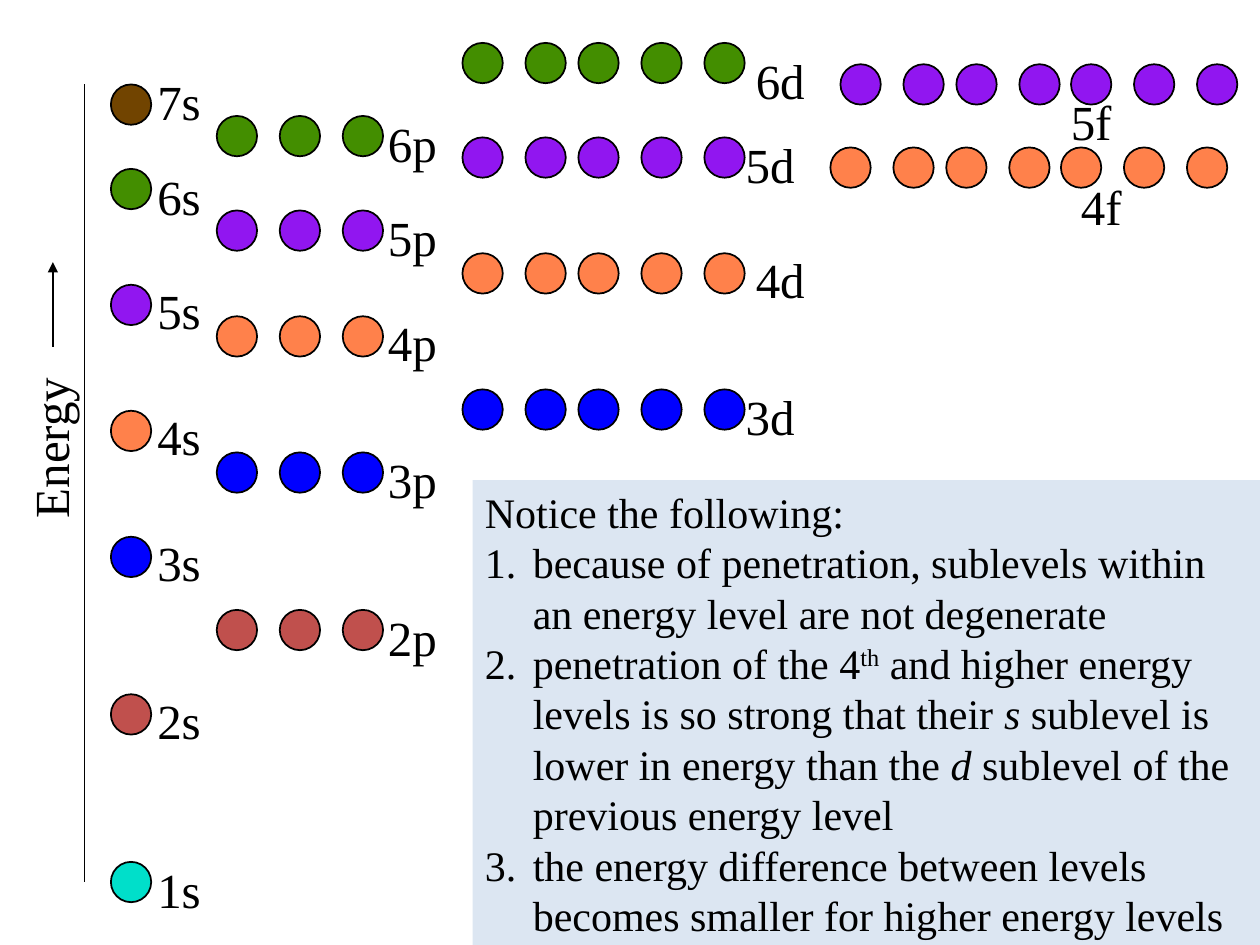
import pptx
import pptx.util
import pptx.dml.color
import pptx.enum.shapes
import pptx.enum.text
import pptx.oxml.ns
from lxml import etree

Inches, Pt = pptx.util.Inches, pptx.util.Pt
RGBColor = pptx.dml.color.RGBColor
MSO_SHAPE = pptx.enum.shapes.MSO_SHAPE
qn = pptx.oxml.ns.qn

FONT = "Times New Roman"
BLACK = RGBColor(0x00, 0x00, 0x00)
NOTE_FILL = RGBColor(0xDC, 0xE6, 0xF2)
TURQUOISE = RGBColor(0x00, 0xDF, 0xCA)
RED = RGBColor(0xC0, 0x50, 0x4D)
BLUE = RGBColor(0x00, 0x00, 0xFF)
ORANGE = RGBColor(0xFF, 0x81, 0x4B)
PURPLE = RGBColor(0x91, 0x16, 0xF0)
GREEN = RGBColor(0x43, 0x8E, 0x00)
BROWN = RGBColor(0x71, 0x44, 0x00)

# Level number, colour, and per sublevel: orbital left, orbital top, label left, label top
LEVELS = [
    (1, TURQUOISE, {"s": (0.88, 6.84, 1.15, 6.77)}),
    (7, BROWN, {"s": (0.88, 0.67, 1.15, 0.52)}),
    (2, RED, {"s": (0.88, 5.51, 1.15, 5.43), "p": (1.72, 4.84, 2.98, 4.77)}),
    (3, BLUE, {"s": (0.88, 4.26, 1.15, 4.18), "p": (1.72, 3.59, 2.98, 3.52),
               "d": (3.67, 3.09, 5.82, 3.02)}),
    (6, GREEN, {"s": (0.88, 1.34, 1.15, 1.27), "p": (1.72, 0.92, 2.98, 0.85),
                "d": (3.67, 0.34, 5.9, 0.35)}),
    (4, ORANGE, {"s": (0.88, 3.26, 1.15, 3.18), "p": (1.72, 2.51, 2.98, 2.43),
                 "d": (3.67, 2.01, 5.9, 1.93), "f": (6.59, 1.17, 8.48, 1.35)}),
    (5, PURPLE, {"s": (0.88, 2.26, 1.15, 2.18), "p": (1.72, 1.67, 2.98, 1.6),
                 "d": (3.67, 1.09, 5.82, 1.02), "f": (6.67, 0.51, 8.4, 0.68)}),
]
# Distance of each orbital from the first one of its sublevel
ORBITAL_STEPS = {
    "s": [0],
    "p": [0, 0.5, 1],
    "d": [0, 0.5, 0.92, 1.42, 1.92],
    "f": [0, 0.5, 0.92, 1.42, 1.83, 2.33, 2.83],
}
# Wide enough that grouped labels stay on one line
LABEL_WIDTHS = {"s": 0.57, "p": 0.6, "d": 0.6, "f": 0.54}
ORBITAL_SIZE = 0.32
LABEL_HEIGHT = 0.56

# Each run is (text, style)
NOTE_HEADING = [("Notice the following:", "")]
NOTE_POINTS = [
    [("because of penetration, sublevels within an energy level are not degenerate", "")],
    [("penetration of the 4", ""), ("th", "superscript"),
     (" and higher energy levels is so strong that their ", ""), ("s ", "italic"),
     ("sublevel is lower in energy than the ", ""), ("d", "italic"),
     (" sublevel of the previous energy level", "")],
    [("the energy difference between levels becomes smaller for higher energy levels", "")],
]


def set_font(paragraph, size):
    paragraph.font.name = FONT
    paragraph.font.size = Pt(size)
    paragraph.font.color.rgb = BLACK


def add_label(shapes, text, left, top, width):
    label = shapes.add_textbox(Inches(left), Inches(top), Inches(width), Inches(LABEL_HEIGHT))
    frame = label.text_frame
    frame.word_wrap = False
    frame.auto_size = pptx.enum.text.MSO_AUTO_SIZE.SHAPE_TO_FIT_TEXT
    frame.text = text
    set_font(frame.paragraphs[0], 28)
    return label


def add_orbital(shapes, left, top, colour):
    orbital = shapes.add_shape(MSO_SHAPE.OVAL, Inches(left), Inches(top),
                               Inches(ORBITAL_SIZE), Inches(ORBITAL_SIZE))
    orbital.shadow.inherit = False
    orbital.fill.solid()
    orbital.fill.fore_color.rgb = colour
    orbital.line.color.rgb = BLACK
    orbital.line.width = Pt(1)


def add_line(shapes, x, start, end):
    line = shapes.add_connector(pptx.enum.shapes.MSO_CONNECTOR.STRAIGHT,
                                Inches(x), Inches(start), Inches(x), Inches(end))
    line.line.color.rgb = BLACK
    line.line.width = Pt(1)
    etree.SubElement(line._element.spPr, qn("a:effectLst"))
    return line


def fill_paragraph(paragraph, runs, numbered):
    set_font(paragraph, 24)
    paragraph.alignment = pptx.enum.text.PP_ALIGN.LEFT
    properties = paragraph._p.get_or_add_pPr()
    properties.set("marL", str(Inches(0.38)))
    properties.set("indent", str(Inches(-0.38)))
    if numbered:
        number = etree.Element(qn("a:buAutoNum"), type="arabicPeriod")
        properties.insert(0, number)
    for text, style in runs:
        run = paragraph.add_run()
        run.text = text
        if style == "italic":
            run.font.italic = True
        elif style == "superscript":
            run.font._element.set("baseline", "30000")


presentation = pptx.Presentation()
presentation.slide_width = Inches(10)
presentation.slide_height = Inches(7.5)
slide = presentation.slides.add_slide(presentation.slide_layouts[6])

# Energy axis
add_line(slide.shapes, 0.67, 0.67, 7)
add_label(slide.shapes, "Energy", -0.27, 3.27, 1.32).rotation = 270
energy_arrow = add_line(slide.shapes, 0.42, 2.75, 2.08)
etree.SubElement(energy_arrow.line._get_or_add_ln(), qn("a:tailEnd"), type="triangle")

# Energy levels, one group each
for number, colour, sublevels in LEVELS:
    level = slide.shapes.add_group_shape()
    for sublevel, (left, top, label_left, label_top) in sublevels.items():
        for step in ORBITAL_STEPS[sublevel]:
            add_orbital(level.shapes, left + step, top, colour)
        add_label(level.shapes, f"{number}{sublevel}", label_left, label_top,
                  LABEL_WIDTHS[sublevel])

# Notes panel
notes = slide.shapes.add_shape(MSO_SHAPE.RECTANGLE, Inches(3.75), Inches(3.81),
                               Inches(6.25), Inches(3.69))
notes.shadow.inherit = False
notes.fill.solid()
notes.fill.fore_color.rgb = NOTE_FILL
notes.line.fill.background()
notes_frame = notes.text_frame
notes_frame.word_wrap = True
notes_frame.auto_size = pptx.enum.text.MSO_AUTO_SIZE.SHAPE_TO_FIT_TEXT
notes_frame.vertical_anchor = pptx.enum.text.MSO_ANCHOR.TOP
fill_paragraph(notes_frame.paragraphs[0], NOTE_HEADING, numbered=False)
for point in NOTE_POINTS:
    fill_paragraph(notes_frame.add_paragraph(), point, numbered=True)

presentation.save("out.pptx")
